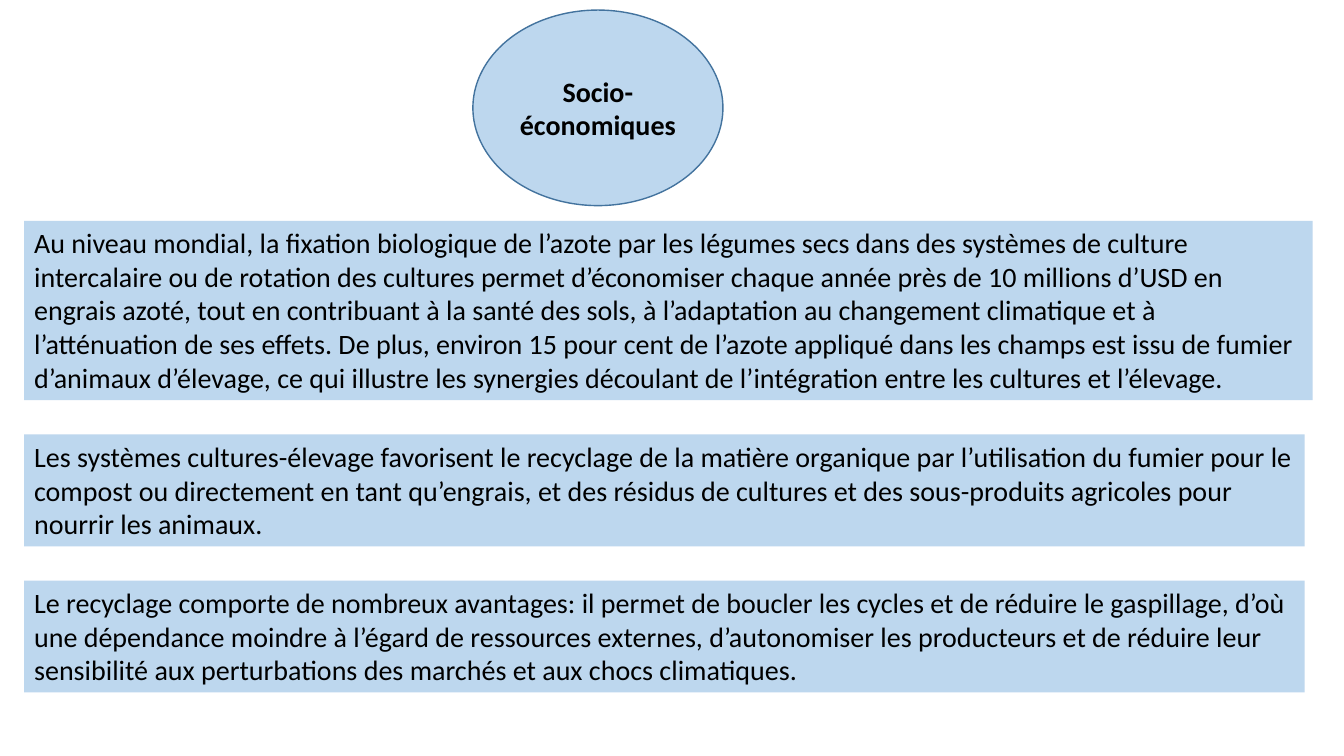
import dataclasses

import pptx
import pptx.dml.color
import pptx.enum.shapes
import pptx.enum.text
import pptx.shapes.autoshape
import pptx.slide
import pptx.util

SCALE = 9144
LEFT = 24
PALE = "BDD7EE"
EDGE = "43739E"
INK = "000000"


@dataclasses.dataclass
class Panel:
    top: int
    width: int
    height: int
    text: str


PANELS = [
    Panel(219, 1278, 178,
          "Au niveau mondial, la fixation biologique de l’azote par les légumes secs "
          "dans des systèmes de culture intercalaire ou de rotation des cultures permet "
          "d’économiser chaque année près de 10 millions d’USD en engrais azoté, tout en "
          "contribuant à la santé des sols, à l’adaptation au changement climatique et à "
          "l’atténuation de ses effets. De plus, environ 15 pour cent de l’azote appliqué "
          "dans les champs est issu de fumier d’animaux d’élevage, ce qui illustre les "
          "synergies découlant de l’intégration entre les cultures et l’élevage."),
    Panel(431, 1270, 111,
          "Les systèmes cultures-élevage favorisent le recyclage de la matière organique "
          "par l’utilisation du fumier pour le compost ou directement en tant qu’engrais, "
          "et des résidus de cultures et des sous-produits agricoles pour nourrir les "
          "animaux."),
    Panel(576, 1270, 111,
          "Le recyclage comporte de nombreux avantages: il permet de boucler les cycles "
          "et de réduire le gaspillage, d’où une dépendance moindre à l’égard de "
          "ressources externes, d’autonomiser les producteurs et de réduire leur "
          "sensibilité aux perturbations des marchés et aux chocs climatiques."),
]


def px(size: int) -> pptx.util.Emu:
    return pptx.util.Emu(size * SCALE)


def color(code: str) -> pptx.dml.color.RGBColor:
    return pptx.dml.color.RGBColor.from_string(code)


def write(shape: pptx.shapes.autoshape.Shape, text: str, bold: bool) -> None:
    shape.text_frame.word_wrap = True
    shape.text_frame.text = text
    font = shape.text_frame.paragraphs[0].runs[0].font
    font.name = "Calibri"
    font.size = pptx.util.Pt(20)
    font.bold = bold
    font.color.rgb = color(INK)


def fill(shape: pptx.shapes.autoshape.Shape) -> None:
    shape.shadow.inherit = False
    shape.fill.solid()
    shape.fill.fore_color.rgb = color(PALE)


def draw_theme(slide: pptx.slide.Slide) -> None:
    oval = slide.shapes.add_shape(
        pptx.enum.shapes.MSO_SHAPE.OVAL, px(469), px(10), px(248), px(194))
    fill(oval)
    oval.line.color.rgb = color(EDGE)
    oval.line.width = pptx.util.Pt(1)
    write(oval, "Socio-économiques", True)
    oval.text_frame.vertical_anchor = pptx.enum.text.MSO_ANCHOR.MIDDLE
    oval.text_frame.paragraphs[0].alignment = pptx.enum.text.PP_ALIGN.CENTER


def draw_panel(slide: pptx.slide.Slide, panel: Panel) -> None:
    box = slide.shapes.add_shape(
        pptx.enum.shapes.MSO_SHAPE.RECTANGLE,
        px(LEFT), px(panel.top), px(panel.width), px(panel.height))
    fill(box)
    box.line.fill.background()
    write(box, panel.text, False)
    box.text_frame.auto_size = pptx.enum.text.MSO_AUTO_SIZE.SHAPE_TO_FIT_TEXT
    box.text_frame.vertical_anchor = pptx.enum.text.MSO_ANCHOR.TOP
    box.text_frame.paragraphs[0].alignment = pptx.enum.text.PP_ALIGN.LEFT


def main() -> None:
    deck = pptx.Presentation()
    deck.slide_width = px(1333)
    deck.slide_height = px(750)
    slide = deck.slides.add_slide(deck.slide_layouts[6])
    draw_theme(slide)
    for panel in PANELS:
        draw_panel(slide, panel)
    deck.save("out.pptx")


if __name__ == "__main__":
    main()
